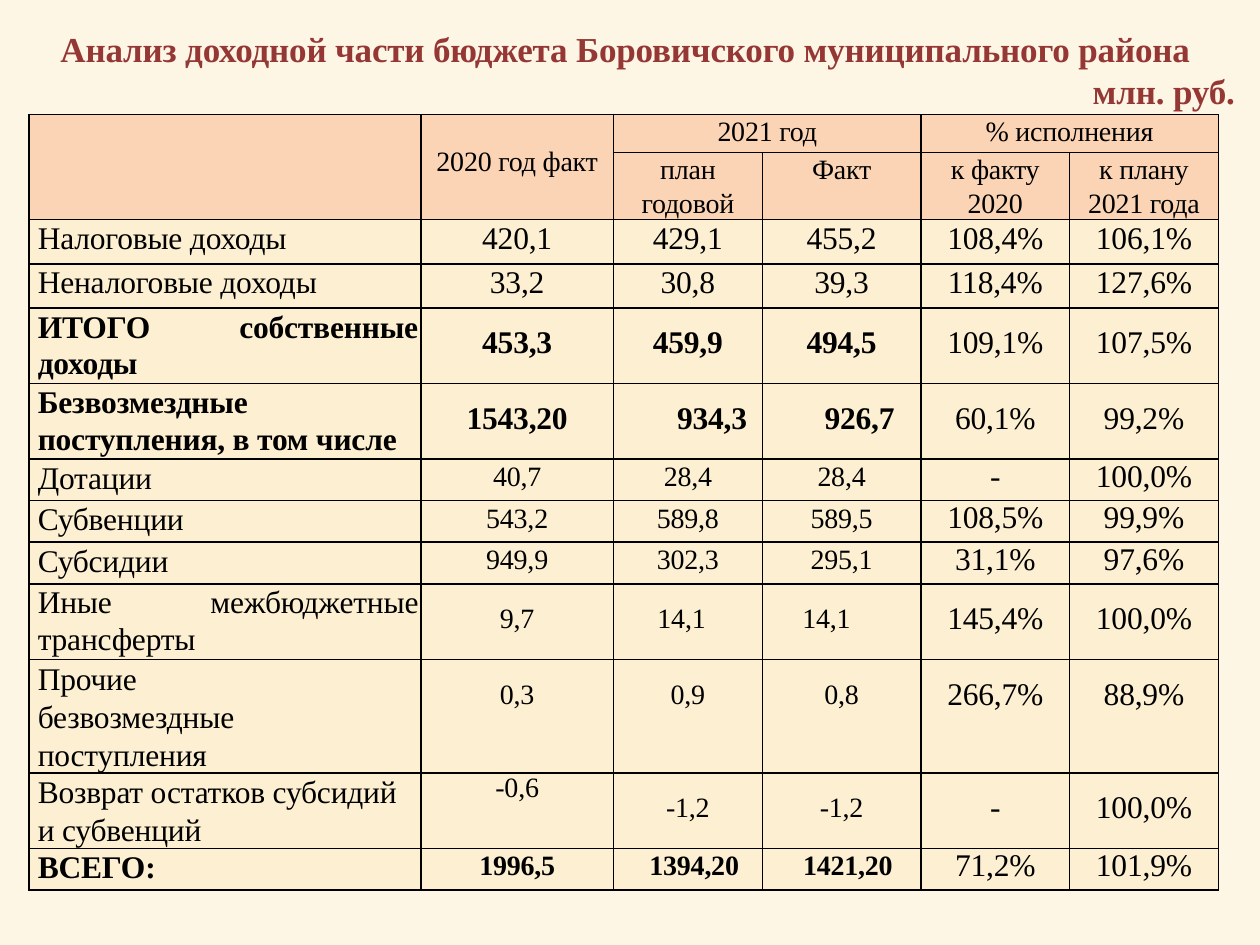
from pptx import Presentation
from pptx.util import Inches, Pt
from pptx.dml.color import RGBColor
from pptx.enum.text import PP_ALIGN
from lxml import etree

LEFT, MID, RIGHT = PP_ALIGN.LEFT, PP_ALIGN.CENTER, PP_ALIGN.RIGHT
NS = "http://schemas.openxmlformats.org/drawingml/2006/main"
INK, TITLE, HEAD, SAND, PAGE = "000000", "943735", "FBD4B5", "FBE2AA", "FEF6E4"

COLS = [3.11, 1.53, 1.18, 1.26, 1.18, 1.18]
ROWS = [0.3, 0.53, 0.35, 0.35, 0.6, 0.6, 0.33, 0.33, 0.33, 0.6, 0.9, 0.6, 0.33]

# Header cells: row, column, last row, last column, text, line pitch, top
HEADS = [
    (0, 0, 1, 0, "", None, 0),
    (0, 1, 1, 1, "2020 год факт", None, 0.25),
    (0, 2, 0, 3, "2021 год", 18.7, 0),
    (0, 4, 0, 5, "% исполнения", 18.7, 0),
    (1, 2, 1, 2, "план\vгодовой", 19.2, 0),
    (1, 3, 1, 3, "Факт", 18.7, 0),
    (1, 4, 1, 4, "к факту\v2020", 19.2, 0),
    (1, 5, 1, 5, "к плану\v2021 года", 19.2, 0),
]
DATA = [
    ("Налоговые доходы", "420,1", "429,1", "455,2", "108,4%", "106,1%"),
    ("Неналоговые доходы", "33,2", "30,8", "39,3", "118,4%", "127,6%"),
    ("ИТОГО\tсобственные\nдоходы", "453,3", "459,9", "494,5", "109,1%", "107,5%"),
    ("Безвозмездные\nпоступления, в том числе", "1543,20", "934,3", "926,7",
     "60,1%", "99,2%"),
    ("Дотации", "40,7", "28,4", "28,4", "-", "100,0%"),
    ("Субвенции", "543,2", "589,8", "589,5", "108,5%", "99,9%"),
    ("Субсидии", "949,9", "302,3", "295,1", "31,1%", "97,6%"),
    ("Иные\tмежбюджетные\nтрансферты", "9,7", "14,1", "14,1", "145,4%", "100,0%"),
    ("Прочие\vбезвозмездные\vпоступления", "0,3", "0,9", "0,8", "266,7%", "88,9%"),
    ("Возврат остатков субсидий\vи субвенций", "-0,6", "-1,2", "-1,2", "-", "100,0%"),
    ("ВСЕГО:", "1996,5", "1394,20", "1421,20", "71,2%", "101,9%"),
]
FIRST = 2                 # first data row
SMALL = 6                 # from this row on the sums are smaller
BOLD = {4, 5, 12}         # rows of totals
TABS = {4: 1.6, 9: 1.37}
# Cells that stand off the column axis
SHIFT = {
    (5, 2): dict(align=RIGHT, right=0.12), (5, 3): dict(align=RIGHT, right=0.21),
    (9, 2): dict(right=0.1), (9, 3): dict(right=0.24),
    (11, 1): dict(top=0),
    (12, 2): dict(left=0.1), (12, 3): dict(left=0.1),
}


def color(hexa):
    return RGBColor.from_string(hexa)


def node(up, tag, **attrs):
    return etree.SubElement(up, f"{{{NS}}}{tag}", **attrs)


class Deck:
    def __init__(self, font):
        self.font = font
        self.prs = Presentation()
        self.prs.slide_width, self.prs.slide_height = Inches(10), Inches(7.5)
        self.slide = self.prs.slides.add_slide(self.prs.slide_layouts[6])

    def back(self, hexa):
        fill = self.slide.background.fill
        fill.solid()
        fill.fore_color.rgb = color(hexa)

    def style(self, par, size, ink=INK, bold=False, align=MID, pitch=None, tab=None):
        par.alignment = align
        if pitch:
            par.line_spacing = Pt(pitch)
        if tab and "\t" in par.text:
            stops = node(par._p.get_or_add_pPr(), "tabLst")
            node(stops, "tab", pos=str(Inches(tab)), algn="l")
        look = dict(name=self.font, size=Pt(size), bold=bold)
        for run in par.runs:
            for key, val in look.items():
                setattr(run.font, key, val)
            run.font.color.rgb = color(ink)
            run._r.get_or_add_rPr().set("spc", "-10")

    def text(self, x, y, w, h, lines, **look):
        box = self.slide.shapes.add_textbox(*map(Inches, (x, y, w, h)))
        frame = box.text_frame
        frame.word_wrap = True
        frame.margin_left = frame.margin_right = frame.margin_bottom = 0
        frame.margin_top = Inches(0.01)
        frame.text = "\n".join(line for line, _ in lines)
        for par, (_, align) in zip(frame.paragraphs, lines):
            self.style(par, align=align, **look)

    def table(self, x, y, cols, rows):
        tab = self.slide.shapes.add_table(
            len(rows), len(cols), Inches(x), Inches(y),
            Inches(sum(cols)), Inches(sum(rows))).table
        tab.first_row = tab.horz_banding = False
        for col, w in zip(tab.columns, cols):
            col.width = Inches(w)
        for row, h in zip(tab.rows, rows):
            row.height = Inches(h)
        return tab

    def paint(self, cell, hexa, alpha=None):
        props = cell._tc.get_or_add_tcPr()
        for side in ("lnL", "lnR", "lnT", "lnB"):
            line = node(props, side, w=str(Pt(1)))
            node(node(line, "solidFill"), "srgbClr", val=INK)
        cell.fill.solid()
        cell.fill.fore_color.rgb = color(hexa)
        if alpha:
            tint = props.find(f"{{{NS}}}solidFill/{{{NS}}}srgbClr")
            node(tint, "alpha", val=str(alpha * 1000))

    def cell(self, cell, text, top=0, left=0, right=0, **look):
        pads = dict(left=left, right=right, top=top, bottom=0)
        for side, pad in pads.items():
            setattr(cell, f"margin_{side}", Inches(pad))
        cell.text = text
        for par in cell.text_frame.paragraphs:
            self.style(par, **look)


def main():
    deck = Deck("Times New Roman")
    deck.back(PAGE)

    # Table grid and fills
    grid = deck.table(0.23, 0.91, COLS, ROWS)
    for r in range(len(ROWS)):
        for c in range(len(COLS)):
            if r < FIRST:
                deck.paint(grid.cell(r, c), HEAD)
            else:
                deck.paint(grid.cell(r, c), SAND, 32)

    # Header
    for r, c, r2, c2, text, pitch, top in HEADS:
        if (r, c) != (r2, c2):
            grid.cell(r, c).merge(grid.cell(r2, c2))
        deck.cell(grid.cell(r, c), text, top=top, size=16, pitch=pitch)

    # Income rows
    for r, (name, *sums) in enumerate(DATA, FIRST):
        bold, tall = r in BOLD, ROWS[r] > 0.5
        deck.cell(grid.cell(r, 0), name, left=0.07, size=18, bold=bold,
                  align=LEFT, pitch=21.6 if r in (10, 11) else 21.1,
                  tab=TABS.get(r))
        for c, val in enumerate(sums, 1):
            small = r >= SMALL and c < 4
            if tall:
                top = 0.16 if small else 0.14
            else:
                top = 0.02 if small else 0.01 if r < SMALL else 0
            look = dict(top=top, size=16 if small else 18, bold=bold and c < 4)
            look.update(SHIFT.get((r, c), {}))
            deck.cell(grid.cell(r, c), val, **look)

    # Title
    deck.text(0.48, 0.21, 9.32, 0.7, [
        ("Анализ доходной части бюджета Боровичского муниципального района", LEFT),
        ("млн. руб.", RIGHT)], size=20, ink=TITLE, bold=True)

    deck.prs.save("out.pptx")


if __name__ == "__main__":
    main()
